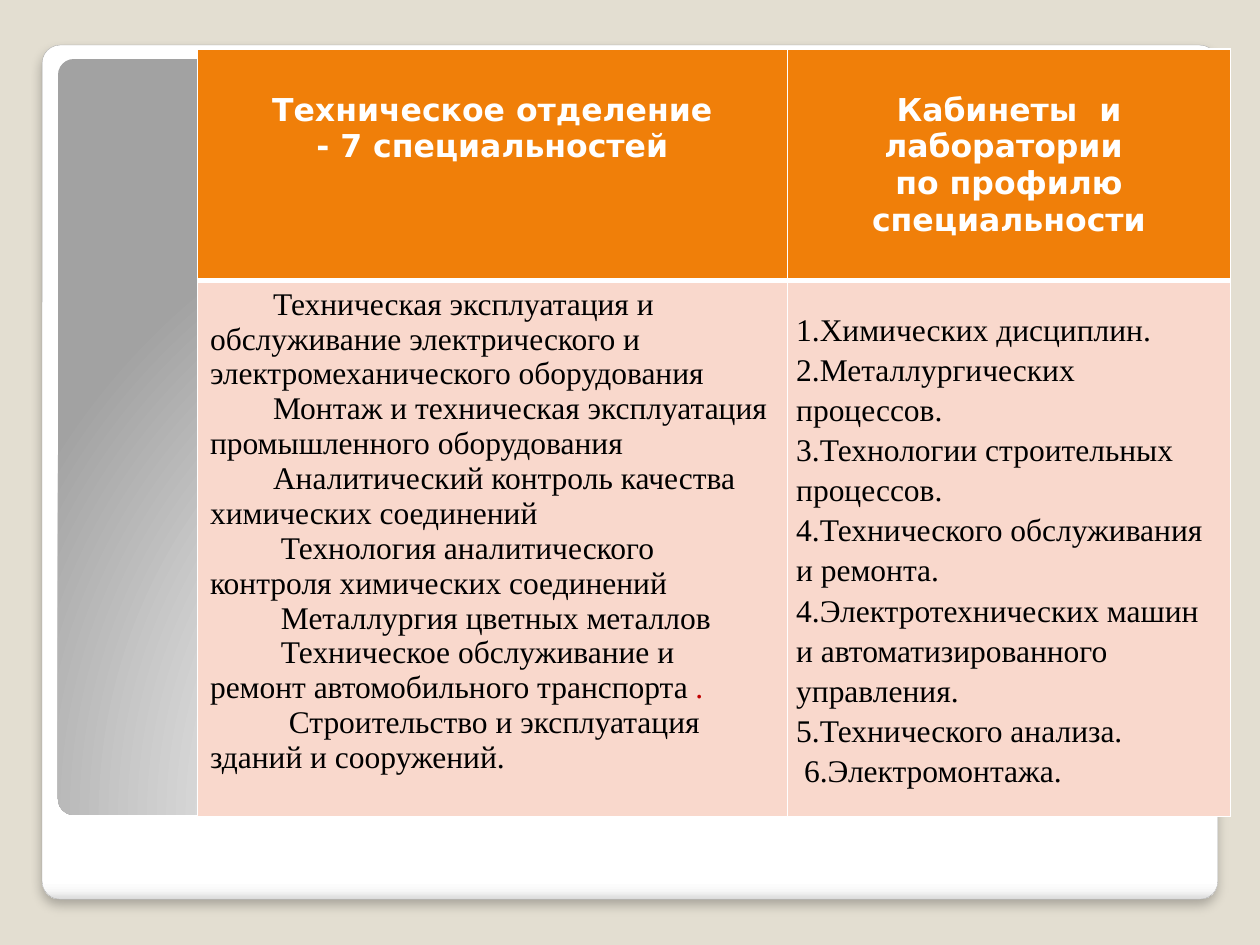
"""Builds a slide listing the technical department's specialities and laboratories."""
from lxml import etree
from pptx import Presentation
from pptx import util as u
from pptx.dml.color import RGBColor
from pptx.enum import shapes, text
from pptx.oxml import parse_xml
from pptx.oxml.ns import nsdecls, qn

COLORS = {"background": "E3DED1", "header": "F07F09", "body": "F9D8CC", "white": "FFFFFF",
          "black": "000000", "accent": "C00000", "outline": "A4A4A4"}

HEADERS = [
    ["Техническое отделение", "- 7 специальностей"],
    ["Кабинеты  и лаборатории ", "по профилю специальности"],
]
SPECIALITIES = [
    (36, "Техническая эксплуатация и обслуживание электрического и электромеханического оборудования"),
    (36, "Монтаж и техническая эксплуатация промышленного оборудования"),
    (36, "Аналитический контроль качества химических соединений"),
    (40.5, "Технология аналитического контроля химических соединений"),
    (40.5, "Металлургия цветных металлов"),
    (40.5, "Техническое обслуживание и ремонт автомобильного транспорта", " ."),
    (45, "Строительство и эксплуатация зданий и сооружений."),
]
LABORATORIES = [
    (0, "1.Химических дисциплин."),
    (0, "2.Металлургических процессов."),
    (0, "3.Технологии строительных процессов."),
    (0, "4.Технического обслуживания и ремонта."),
    (0, "4.Электротехнических машин и автоматизированного управления."),
    (0, "5.Технического анализа."),
    (4.5, "6.Электромонтажа."),
]

HEADER_FONT = {"name": "DejaVu Sans", "size": u.Pt(18), "bold": True, "italic": False}
BODY_FONT = {"name": "Times New Roman", "size": u.Pt(18), "bold": False, "italic": False}
HEADER_CELL = {"margin_top": u.Cm(0.87), "vertical_anchor": text.MSO_ANCHOR.TOP}
SPECIALITY_CELL = {"vertical_anchor": text.MSO_ANCHOR.TOP}
LABORATORY_CELL = {"vertical_anchor": text.MSO_ANCHOR.MIDDLE, "margin_left": u.Cm(0.18),
                   "margin_right": u.Cm(0.18), "margin_top": 0, "margin_bottom": 0}

TABLE_LEFT, TABLE_TOP = 3.98, 0.99
COLUMN_WIDTHS = [11.89, 8.94]
ROW_HEIGHTS = [4.67, 10.8]

FRAME = (0.85, 0.91, 23.7, 17.22)
FRAME_STOPS = [(0, "FFFFFF"), (98, "FFFFFF"), (99, "F7F7F7"), (100, "DADADA")]
FRAME_DIRECTION = '<a:lin ang="5400000" scaled="0"/>'
PANEL = (1.17, 1.19, 23.06, 15.24)
PANEL_STOPS = [(0, "FFFFFF"), (55, "E1E1E1"), (100, "A2A2A2")]
PANEL_DIRECTION = ('<a:path path="circle"><a:fillToRect l="50000" t="175000" '
                   'r="50000" b="-75000"/></a:path>')


def rgb(name):
    return RGBColor.from_string(COLORS[name])


def set_all(target, values):
    for name, value in values.items():
        setattr(target, name, value)


def add_rounded(slide, box, stops, direction):
    shape = slide.shapes.add_shape(shapes.MSO_SHAPE.ROUNDED_RECTANGLE, *map(u.Cm, box))
    shape.adjustments[0] = 0.021
    shape.shadow.inherit = False
    shape.line.fill.background()
    marks = "".join(f'<a:gs pos="{place * 1000}"><a:srgbClr val="{color}"/></a:gs>'
                    for place, color in stops)
    gradient = parse_xml(f'<a:gradFill {nsdecls("a")} rotWithShape="1">'
                         f'<a:gsLst>{marks}</a:gsLst>{direction}</a:gradFill>')
    shape._element.spPr.find(qn("a:prstGeom")).addnext(gradient)
    return shape


def add_frame(slide):
    frame = add_rounded(slide, FRAME, FRAME_STOPS, FRAME_DIRECTION)
    frame.line.color.rgb = rgb("outline")
    frame.line.width = u.Pt(0.16)
    frame._element.spPr.find(qn("a:effectLst")).append(parse_xml(
        f'<a:outerShdw {nsdecls("a")} blurRad="{u.Pt(6)}" dist="{u.Pt(4)}" dir="5400000" '
        f'rotWithShape="0"><a:srgbClr val="{COLORS["black"]}"><a:alpha val="25000"/>'
        '</a:srgbClr></a:outerShdw>'))


def set_borders(cell, top, bottom):
    properties = cell._tc.get_or_add_tcPr()
    widths = {"lnL": 1, "lnR": 1, "lnT": top, "lnB": bottom}
    for position, (tag, width) in enumerate(widths.items()):
        border = etree.Element(qn(f"a:{tag}"), w=str(u.Pt(width)))
        fill = etree.SubElement(border, qn("a:solidFill"))
        etree.SubElement(fill, qn("a:srgbClr"), val=COLORS["white"])
        properties.insert(position, border)


def fill_cell(cell, items, color, font, font_color, layout, style):
    set_all(cell, layout)
    cell.fill.solid()
    cell.fill.fore_color.rgb = rgb(color)
    frame = cell.text_frame
    for index, (indent, *parts) in enumerate(items):
        paragraph = frame.paragraphs[0] if index == 0 else frame.add_paragraph()
        set_all(paragraph, style)
        if indent:
            paragraph._p.get_or_add_pPr().set("indent", str(u.Pt(indent)))
        for number, part in enumerate(parts):
            run = paragraph.add_run()
            run.text = part
            set_all(run.font, font)
            run.font.italic = number > 0
            run.font.color.rgb = rgb("accent" if number else font_color)


def add_table(slide):
    table = slide.shapes.add_table(
        len(ROW_HEIGHTS), len(COLUMN_WIDTHS), u.Cm(TABLE_LEFT), u.Cm(TABLE_TOP),
        u.Cm(sum(COLUMN_WIDTHS)), u.Cm(sum(ROW_HEIGHTS))).table
    table.horz_banding = False
    for column, width in zip(table.columns, COLUMN_WIDTHS):
        column.width = u.Cm(width)
    for row, height in zip(table.rows, ROW_HEIGHTS):
        row.height = u.Cm(height)
    bodies = [(SPECIALITIES, SPECIALITY_CELL, {}),
              (LABORATORIES, LABORATORY_CELL, {"line_spacing": 1.15})]
    for column, (lines, (items, layout, style)) in enumerate(zip(HEADERS, bodies)):
        header, body = table.cell(0, column), table.cell(1, column)
        fill_cell(header, [(0, line) for line in lines], "header", HEADER_FONT, "white",
                  HEADER_CELL, {"alignment": text.PP_ALIGN.CENTER})
        fill_cell(body, items, "body", BODY_FONT, "black", layout, style)
        set_borders(header, 1, 3)
        set_borders(body, 3, 1)


def main():
    presentation = Presentation()
    presentation.slide_width, presentation.slide_height = u.Cm(25.4), u.Cm(19.05)
    slide = presentation.slides.add_slide(presentation.slide_layouts[6])
    slide.background.fill.solid()
    slide.background.fill.fore_color.rgb = rgb("background")
    add_frame(slide)
    add_rounded(slide, PANEL, PANEL_STOPS, PANEL_DIRECTION)
    add_table(slide)
    presentation.save("out.pptx")


if __name__ == "__main__":
    main()
